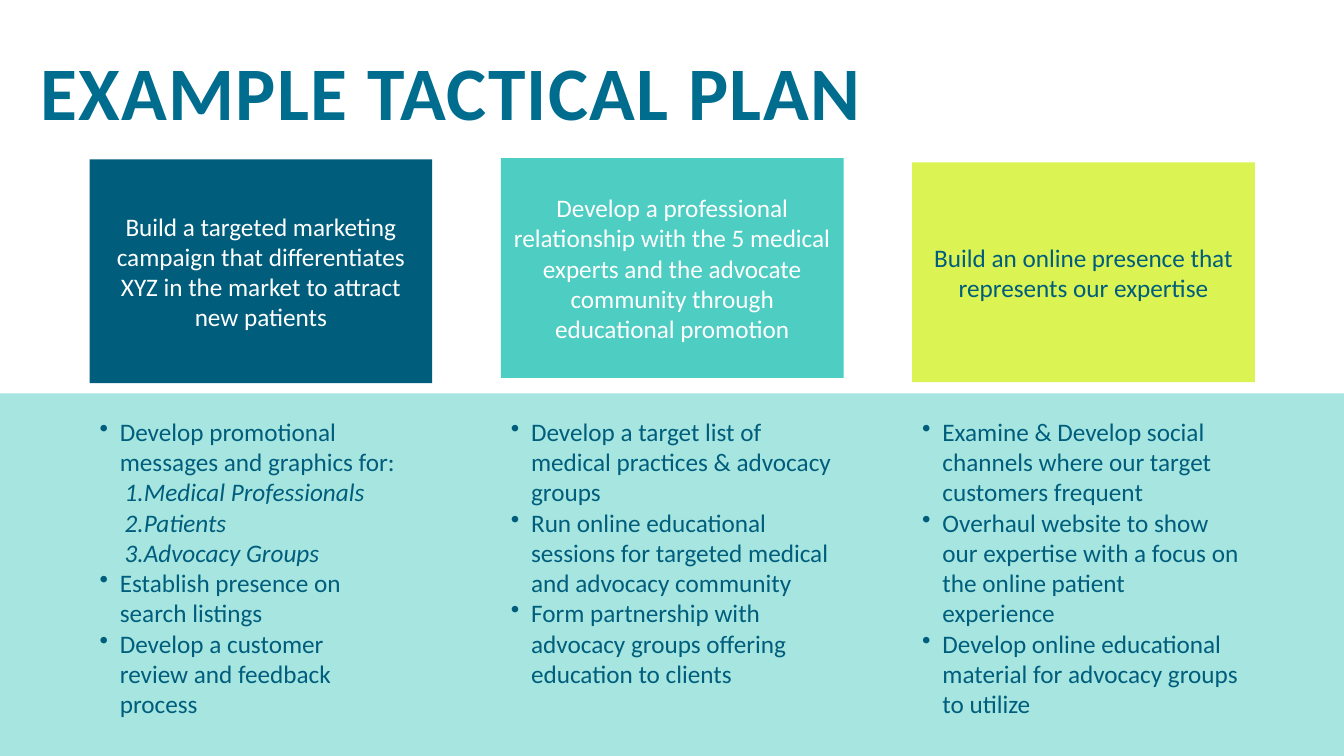
from lxml.etree import SubElement
from pptx import Presentation
from pptx.dml.color import RGBColor
from pptx.enum.shapes import MSO_SHAPE
from pptx.enum.text import MSO_ANCHOR as Anchor, MSO_AUTO_SIZE as AutoSize, PP_ALIGN as Align
from pptx.oxml.ns import qn
from pptx.util import Pt

NAVY, TEAL, LIME, BLUE, WHITE = "005E7C", "4ECDC3", "DBF353", "006D8F", "FFFFFF"
COLUMN_LEFT, COLUMN_STEP, CARD_WIDTH = 64, 293.8, 244.8
LIST_TOP, LIST_HEIGHT = 293.8, 203.8

COLUMNS = [
    {
        "goal": "Build a targeted marketing campaign that differentiates XYZ in the market to attract new patients",
        "card": (113.8, 160, NAVY, WHITE),
        "list_width": 226.8,
        "tactics": [
            "Develop promotional messages and graphics for:",
            ["Medical Professionals", "Patients", "Advocacy Groups"],
            "Establish presence on search listings",
            "Develop a customer review and feedback process",
        ],
    },
    {
        "goal": "Develop a professional relationship with the 5 medical experts and the advocate "
                "community through educational promotion",
        "card": (113, 157, TEAL, WHITE),
        "list_width": 244.8,
        "tactics": [
            "Develop a target list of medical practices & advocacy groups",
            "Run online educational sessions for targeted medical and advocacy community",
            "Form partnership with advocacy groups offering education to clients",
        ],
    },
    {
        "goal": "Build an online presence that represents our expertise",
        "card": (116, 157, LIME, NAVY),
        "list_width": 240.5,
        "tactics": [
            "Examine & Develop social channels where our target customers frequent",
            "Overhaul website to show our expertise with a focus on the online patient experience",
            "Develop online educational material for advocacy groups to utilize",
        ],
    },
]


def rgb(value):
    return RGBColor.from_string(value)


class PlanSlide:
    font_name = "Calibri"
    body_size = 18

    def __init__(self, presentation):
        self.slide = presentation.slides.add_slide(presentation.slide_layouts[6])

    def format_runs(self, paragraph, color, size=body_size, bold=False, italic=False):
        for run in paragraph.runs:
            run.font.name = self.font_name
            run.font.size = Pt(size)
            run.font.bold = bold
            run.font.italic = italic
            run.font.color.rgb = rgb(color)

    def rectangle(self, left, top, width, height, fill, opacity=100):
        shape = self.slide.shapes.add_shape(
            MSO_SHAPE.RECTANGLE, Pt(left), Pt(top), Pt(width), Pt(height))
        shape.shadow.inherit = False
        shape.line.fill.background()
        shape.fill.solid()
        shape.fill.fore_color.rgb = rgb(fill)
        if opacity < 100:
            color = shape._element.spPr.find(qn("a:solidFill")).find(qn("a:srgbClr"))
            SubElement(color, qn("a:alpha"), val=str(opacity * 1000))
        return shape

    def card(self, left, top, width, height, fill, color, text):
        frame = self.rectangle(left, top, width, height, fill).text_frame
        frame.word_wrap = True
        frame.vertical_anchor = Anchor.MIDDLE
        frame.text = text
        paragraph = frame.paragraphs[0]
        paragraph.alignment = Align.CENTER
        self.format_runs(paragraph, color)

    def text_box(self, left, top, width, height, text):
        box = self.slide.shapes.add_textbox(Pt(left), Pt(top), Pt(width), Pt(height))
        frame = box.text_frame
        frame.word_wrap = True
        frame.text = text
        return frame

    def title(self, left, top, width, height, text):
        frame = self.text_box(left, top, width, height, text)
        frame.vertical_anchor = Anchor.MIDDLE
        paragraph = frame.paragraphs[0]
        paragraph.line_spacing = 0.8
        self.format_runs(paragraph, BLUE, 54, bold=True)
        paragraph.runs[0]._r.get_or_add_rPr().set("spc", "100")

    def bullet(self, paragraph, numbered):
        margin, hanging = (31.5, 13.5) if numbered else (14.5, 14.5)
        properties = paragraph._p.get_or_add_pPr()
        properties.set("marL", str(Pt(margin)))
        properties.set("indent", str(-Pt(hanging)))
        if numbered:
            paragraph.level = 1
            SubElement(properties, qn("a:buAutoNum"), type="arabicPeriod")
        else:
            SubElement(properties, qn("a:buChar"), char="•")

    def tactics(self, left, top, width, height, items):
        lines = []
        for item in items:
            if isinstance(item, list):
                lines += [(text, True) for text in item]
            else:
                lines.append((item, False))
        frame = self.text_box(left, top, width, height, "\n".join(text for text, _ in lines))
        frame.auto_size = AutoSize.SHAPE_TO_FIT_TEXT
        for paragraph, (_, numbered) in zip(frame.paragraphs, lines):
            self.bullet(paragraph, numbered)
            self.format_runs(paragraph, NAVY, italic=numbered)


def main():
    presentation = Presentation()
    presentation.slide_width = Pt(960)
    presentation.slide_height = Pt(540)
    plan = PlanSlide(presentation)
    plan.rectangle(0, 281, 960, 259, TEAL, opacity=50)
    plan.title(21.6, 11.5, 765.4, 118, "EXAMPLE TACTICAL PLAN")
    for index, column in enumerate(COLUMNS):
        left = COLUMN_LEFT + index * COLUMN_STEP
        top, height, fill, color = column["card"]
        plan.card(left, top, CARD_WIDTH, height, fill, color, column["goal"])
        plan.tactics(left, LIST_TOP, column["list_width"], LIST_HEIGHT, column["tactics"])
    presentation.save("out.pptx")


if __name__ == "__main__":
    main()
